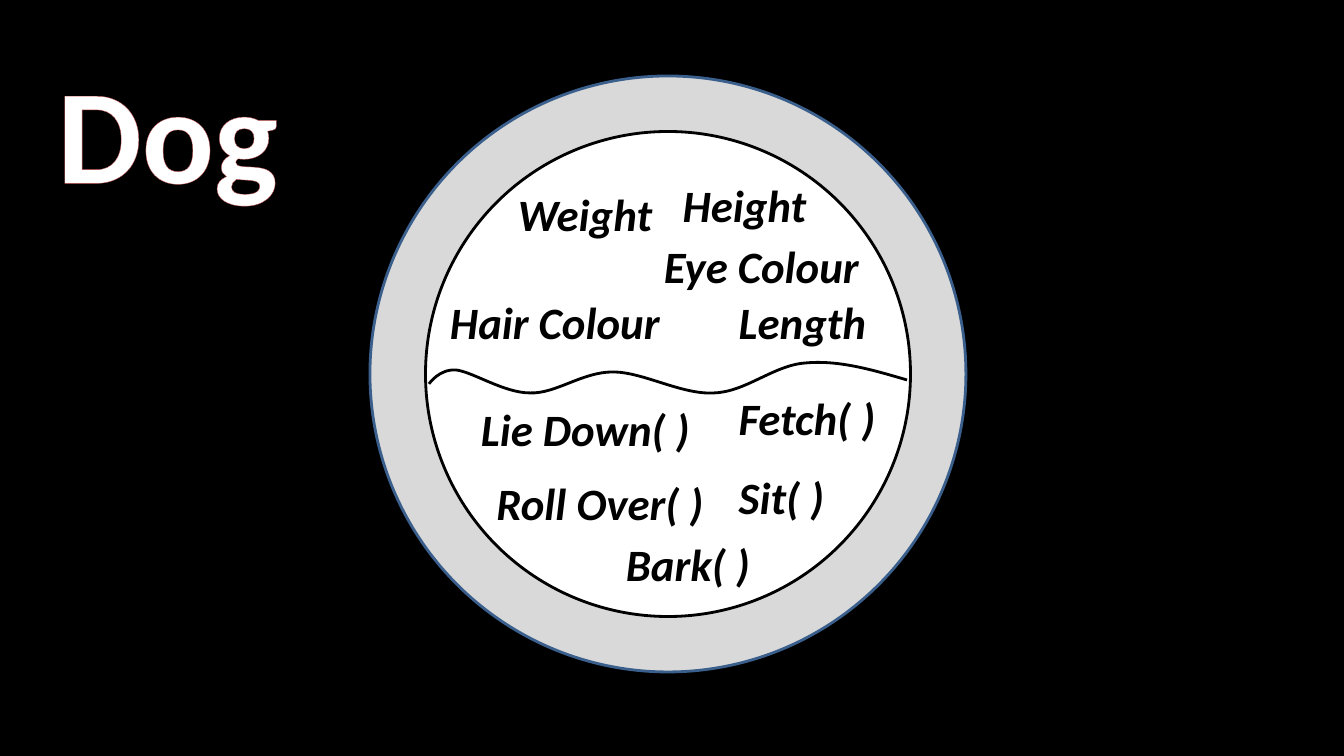
import pptx
import pptx.util
import pptx.dml.color
import pptx.enum.shapes
import pptx.enum.text
import pptx.oxml
from pptx.oxml.ns import qn

# Content: places are left, top, width in px
TITLE = ("Dog", 46, 44, 243)
ATTRIBUTES = [
    ("Weight", 507, 182, 156),
    ("Height", 672, 173, 145),
    ("Eye Colour", 653, 234, 217),
    ("Hair Colour", 439, 290, 232),
    ("Length", 728, 290, 149),
]
METHODS = [
    ("Lie Down( )", 470, 397, 231),
    ("Fetch( )", 728, 386, 158),
    ("Roll Over( )", 485, 471, 230),
    ("Sit( )", 728, 465, 107),
    ("Bark( )", 615, 532, 146),
]
CENTRE = (668, 374)
RINGS = [(596, "ring", "ring_line"), (485, "white", "black")]  # diameter, fill, line
WAVE_START = (907, 380)
WAVE = [  # two control points and an end point for each bend
    (873, 370), (839, 360), (806, 363),
    (774, 365), (746, 392), (714, 393),
    (682, 395), (643, 372), (613, 372),
    (582, 372), (556, 394), (530, 393),
    (504, 393), (473, 372), (456, 370),
    (439, 369), (429, 384), (429, 384),
]
COLOURS = {"black": "000000", "white": "FFFFFF", "ring": "D9D9D9",
           "ring_line": "3A5F8C", "title_line": "C0504D"}
FONT = "Calibri"
SCALE = 914400 / 100.8


def px(length):
    return pptx.util.Emu(round(length * SCALE))


def colour(name):
    return pptx.dml.color.RGBColor.from_string(COLOURS[name])


def style_line(shape, name):
    shape.shadow.inherit = False
    shape.line.color.rgb = colour(name)
    shape.line.width = pptx.util.Pt(2)


def add_text(page, text, left, top, width, *, height=65, size=32,
             ink="black", italic=True, outline=None):
    box = page.shapes.add_textbox(px(left), px(top), px(width), px(height))
    frame = box.text_frame
    frame.word_wrap = False
    frame.auto_size = pptx.enum.text.MSO_AUTO_SIZE.SHAPE_TO_FIT_TEXT
    para = frame.paragraphs[0]
    para.alignment = pptx.enum.text.PP_ALIGN.CENTER
    span = para.add_run()
    span.text = text
    span.font.name = FONT
    span.font.size = pptx.util.Pt(size)
    span.font.bold = True
    span.font.italic = italic
    span.font.color.rgb = colour(ink)
    if outline:
        span.font._element.insert(0, pptx.oxml.parse_xml(
            '<a:ln xmlns:a="http://schemas.openxmlformats.org/drawingml/2006/main" w="6600">'
            f'<a:solidFill><a:srgbClr val="{COLOURS[outline]}"/></a:solidFill></a:ln>'))


def add_wave(page):
    builder = page.shapes.build_freeform(*map(px, WAVE_START))
    builder.add_line_segments([(px(x), px(y)) for x, y in WAVE], close=False)
    wave = builder.convert_to_shape()
    wave.fill.background()
    style_line(wave, "black")
    # Turn each three straight segments into one Bézier bend
    segments = list(wave._element.iter(qn("a:lnTo")))
    for index in range(0, len(segments), 3):
        first, *others = segments[index:index + 3]
        first.tag = qn("a:cubicBezTo")
        for other in others:
            first.append(other[0])
            other.getparent().remove(other)


def main():
    deck = pptx.Presentation()
    deck.slide_width, deck.slide_height = px(1344), px(756)
    page = deck.slides.add_slide(deck.slide_layouts[6])
    page.background.fill.solid()
    page.background.fill.fore_color.rgb = colour("black")

    # Rings around one centre
    for diameter, fill, line in RINGS:
        left, top = (middle - diameter / 2 for middle in CENTRE)
        ring = page.shapes.add_shape(pptx.enum.shapes.MSO_SHAPE.OVAL,
                                     px(left), px(top), px(diameter), px(diameter))
        ring.fill.solid()
        ring.fill.fore_color.rgb = colour(fill)
        style_line(ring, line)

    # Wave between attributes and methods
    add_wave(page)

    # Title and labels
    add_text(page, *TITLE, height=173, size=96, ink="white",
             italic=False, outline="title_line")
    for label in ATTRIBUTES + METHODS:
        add_text(page, *label)

    deck.save("out.pptx")


if __name__ == "__main__":
    main()
